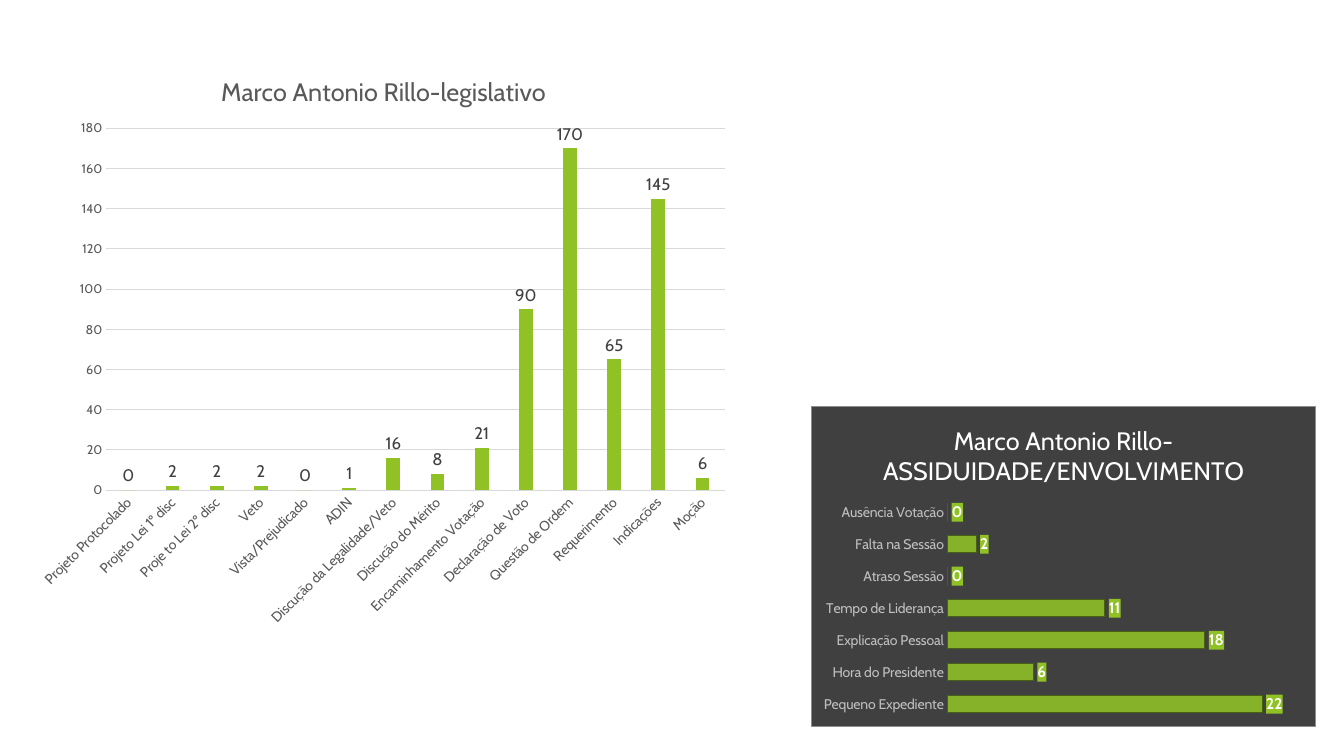
"""Build a slide with two charts on a councillor's legislative work and attendance."""
import collections

import lxml.etree
import pptx
import pptx.chart.data
import pptx.dml.color
import pptx.enum.chart
import pptx.oxml
import pptx.oxml.ns
import pptx.util

Cm, Pt = pptx.util.Cm, pptx.util.Pt
RGB = pptx.dml.color.RGBColor.from_string
XL = pptx.enum.chart
qn = pptx.oxml.ns.qn

Theme = collections.namedtuple(
    "Theme", "font green edge panel border grid gray ink pale white title label badge axis scale")
theme = Theme(font="Cabin", green="90C226", edge="486113", panel="404040", border="8C8C8C",
              grid="D9D9D9", gray="595959", ink="404040", pale="BFBFBF", white="FFFFFF",
              title=18, label=12, badge=11, axis=10, scale=9)


def style(font, size, color, bold=False):
    font.name, font.size, font.bold = theme.font, Pt(size), bold
    font.color.rgb = RGB(color)


def write_title(chart, text, size=theme.title, color=theme.gray):
    frame = chart.chart_title.text_frame
    frame.text = text
    style(frame.paragraphs[0].runs[0].font, size, color)
    chart.chart_title.include_in_layout = False


legislative = {
    "Projeto Protocolado": 0, "Projeto Lei 1º disc": 2, "Proje to Lei 2º disc": 2, "Veto": 2,
    "Vista/Prejudicado": 0, "ADIN": 1, "Discução da Legalidade/Veto": 16,
    "Discução do Mérito": 8, "Encaminhamento Votação": 21, "Declaração de Voto": 90,
    "Questão de Ordem": 170, "Requerimento": 65, "Indicações": 145, "Moção": 6,
}
attendance = {
    "Pequeno Expediente": 22, "Hora do Presidente": 6, "Explicação Pessoal": 18,
    "Tempo de Liderança": 11, "Atraso Sessão": 0, "Falta na Sessão": 2, "Ausência Votação": 0,
}

deck = pptx.Presentation()
deck.slide_width, deck.slide_height = Cm(33.87), Cm(19.05)
slide = deck.slides.add_slide(deck.slide_layouts[6])

panels = [
    dict(counts=legislative, kind=XL.XL_CHART_TYPE.COLUMN_CLUSTERED,
         box=(0.71, 1.32, 17.91, 14.71), plot=(0.11, 0.13, 0.87, 0.62),
         title="Marco Antonio Rillo-legislativo", title_color=theme.gray,
         names=theme.gray, gap=219, overlap=-27, top=180, step=20,
         label=(theme.label, theme.ink, False)),
    dict(counts=attendance, kind=XL.XL_CHART_TYPE.BAR_CLUSTERED,
         box=(20.45, 10.24, 12.7, 8.08), plot=(0.27, 0.28, 0.71, 0.7),
         title="Marco Antonio Rillo-ASSIDUIDADE/ENVOLVIMENTO", title_color=theme.white,
         names=theme.pale, gap=84, overlap=0, top=25, step=5,
         label=(theme.badge, theme.white, True)),
]

charts = []
for panel in panels:
    data = pptx.chart.data.CategoryChartData(number_format="0")
    data.categories = panel["counts"].keys()
    data.add_series("Series 1", panel["counts"].values())
    chart = slide.shapes.add_chart(panel["kind"], *map(Cm, panel["box"]), data).chart
    charts.append(chart)
    style(chart.font, theme.axis, "000000")
    chart.has_legend = False
    write_title(chart, panel["title"], color=panel["title_color"])

    bars = chart.plots[0]
    bars.gap_width, bars.overlap, bars.vary_by_categories = panel["gap"], panel["overlap"], False
    fill = bars.series[0].format.fill
    fill.solid()
    fill.fore_color.rgb = RGB(theme.green)
    bars.series[0].invert_if_negative = False

    bars.has_data_labels = True
    labels = bars.data_labels
    labels.show_value = True
    labels.position = XL.XL_LABEL_POSITION.OUTSIDE_END
    labels.number_format, labels.number_format_is_linked = "0", False
    size, color, bold = panel["label"]
    style(labels.font, size, color, bold=bold)

    names, scale = chart.category_axis, chart.value_axis
    for axis in (names, scale):
        axis.major_tick_mark = axis.minor_tick_mark = XL.XL_TICK_MARK.NONE
    style(names.tick_labels.font, theme.axis, panel["names"])
    scale.minimum_scale, scale.maximum_scale = 0, panel["top"]
    scale.major_unit = panel["step"]

    area = chart.element.find(".//" + qn("c:plotArea"))
    for old in area.findall(qn("c:layout")):
        area.remove(old)
    layout = lxml.etree.Element(qn("c:layout"))
    manual = lxml.etree.SubElement(layout, qn("c:manualLayout"))
    settings = [("layoutTarget", "inner"), ("xMode", "edge"), ("yMode", "edge")]
    for tag, value in settings + list(zip("xywh", panel["plot"])):
        lxml.etree.SubElement(manual, qn("c:" + tag)).set("val", str(value))
    area.insert(0, layout)

work, presence = charts

work.category_axis.format.line.color.rgb = RGB(theme.grid)
work.category_axis.format.line.width = Pt(0.75)
work.category_axis.element.find(".//" + qn("a:bodyPr")).set("rot", "-2700000") if hasattr(
    work.category_axis, "element") else work.element.find(
    ".//" + qn("c:catAx") + "/" + qn("c:txPr") + "/" + qn("a:bodyPr")).set("rot", "-2700000")
style(work.value_axis.tick_labels.font, theme.scale, theme.gray)
work.value_axis.tick_labels.number_format = "0"
work.value_axis.tick_labels.number_format_is_linked = False
work.value_axis.format.line.fill.background()
grid = work.value_axis.major_gridlines.format.line
grid.color.rgb, grid.width = RGB(theme.grid), Pt(0.75)

presence.value_axis.has_major_gridlines = False
presence.value_axis.visible = False
presence.category_axis.format.line.fill.background()
outline = presence.plots[0].series[0].format.line
outline.color.rgb, outline.width = RGB(theme.edge), Pt(0.75)
bar_color = presence.element.find(
    ".//" + qn("c:ser") + "/" + qn("c:spPr") + "/" + qn("a:solidFill") + "/" + qn("a:srgbClr"))
lxml.etree.SubElement(bar_color, qn("a:alpha")).set("val", "88000")

backdrops = [
    (presence.element.find(qn("c:chart")), theme.panel, theme.border),
    (presence.element.find(".//" + qn("c:dLbls") + "/" + qn("c:numFmt")), theme.green, None),
]
for neighbour, color, border in backdrops:
    line = (f'<a:ln w="{Pt(0.5)}"><a:solidFill><a:srgbClr val="{border}"/></a:solidFill></a:ln>'
            if border else "<a:ln><a:noFill/></a:ln>")
    neighbour.addnext(pptx.oxml.parse_xml(
        f'<c:spPr {pptx.oxml.ns.nsdecls("c", "a")}><a:solidFill><a:srgbClr val="{color}"/>'
        f"</a:solidFill>{line}</c:spPr>"))

deck.save("out.pptx")
